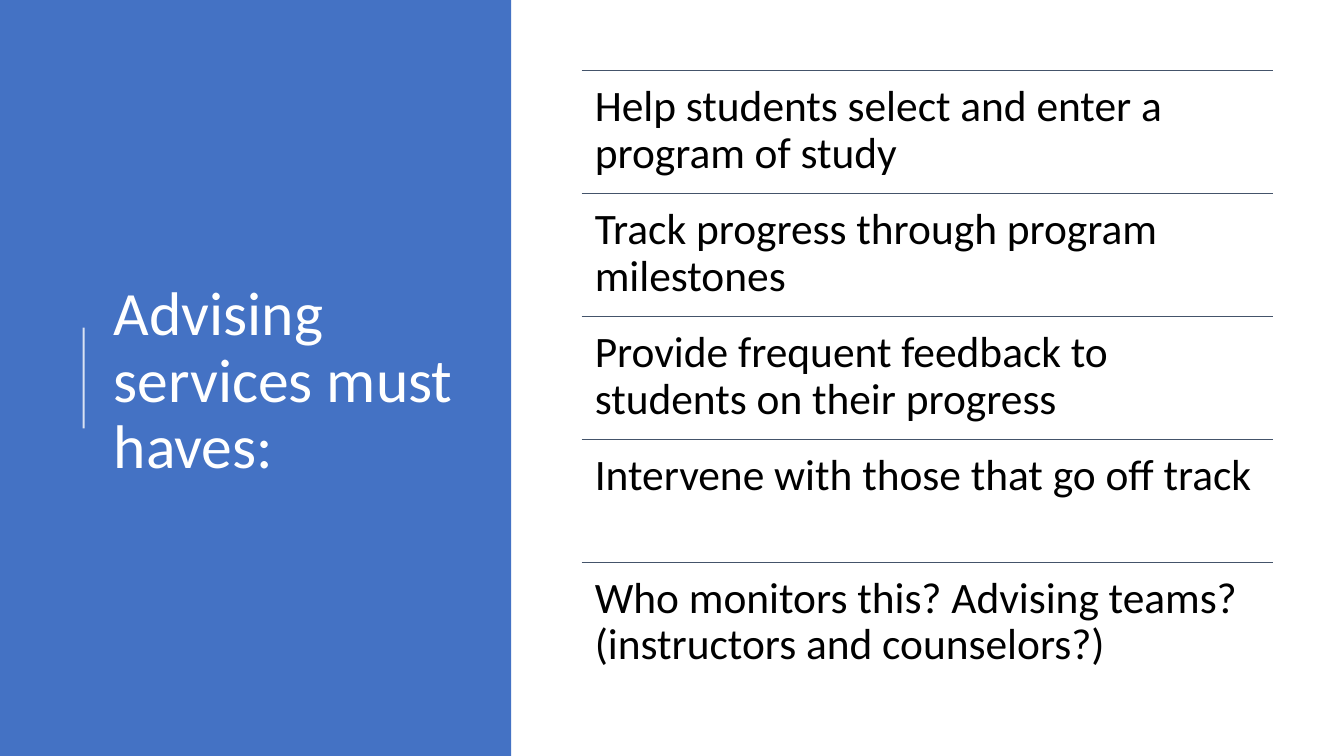
import pptx
import pptx.util
import pptx.dml.color
import pptx.enum.shapes
import pptx.enum.text
import pptx.oxml.ns
import lxml.etree

Inches = pptx.util.Inches


def color(value):
    return pptx.dml.color.RGBColor.from_string(value)


class SlideBuilder:
    font = "Calibri"
    blue = "4472C4"
    slate = "44546A"
    white = "FFFFFF"
    black = "000000"

    def __init__(self, deck):
        self.page = deck.slides.add_slide(deck.slide_layouts[6])

    def panel(self, left, top, width, height, fill):
        shape = self.page.shapes.add_shape(
            pptx.enum.shapes.MSO_SHAPE.RECTANGLE,
            Inches(left), Inches(top), Inches(width), Inches(height))
        shape.shadow.inherit = False
        shape.fill.solid()
        shape.fill.fore_color.rgb = color(fill)
        shape.line.fill.background()

    def line(self, start, end, stroke, weight, opacity=100):
        connector = self.page.shapes.add_connector(
            pptx.enum.shapes.MSO_CONNECTOR.STRAIGHT,
            *[Inches(value) for value in start + end])
        connector.line.color.rgb = color(stroke)
        connector.line.width = pptx.util.Pt(weight)
        properties = connector._element.spPr
        qualify = pptx.oxml.ns.qn
        lxml.etree.SubElement(properties, qualify("a:effectLst"))
        if opacity < 100:
            tint = properties.find(".//" + qualify("a:srgbClr"))
            alpha = lxml.etree.SubElement(tint, qualify("a:alpha"))
            alpha.set("val", str(opacity * 1000))

    def text(self, left, top, width, height, words, size, ink, anchor, insets):
        box = self.page.shapes.add_textbox(
            Inches(left), Inches(top), Inches(width), Inches(height))
        frame = box.text_frame
        frame.word_wrap = True
        frame.vertical_anchor = anchor
        frame.margin_left = frame.margin_right = Inches(insets[0])
        frame.margin_top = frame.margin_bottom = Inches(insets[1])
        para = frame.paragraphs[0]
        para.line_spacing = 0.9
        span = para.add_run()
        span.text = words
        span.font.name = self.font
        span.font.size = pptx.util.Pt(size)
        span.font.color.rgb = color(ink)


def main():
    deck = pptx.Presentation()
    deck.slide_width = Inches(13.33)
    deck.slide_height = Inches(7.5)
    slide = SlideBuilder(deck)
    anchors = pptx.enum.text.MSO_ANCHOR

    slide.panel(0, 0, 5.07, 7.5, slide.blue)
    slide.line((0.83, 4.25), (0.83, 3.25), slide.white, 1.5, opacity=80)
    slide.text(1.03, 0.78, 3.69, 6.02, "Advising services must haves:",
               44, slide.white, anchors.MIDDLE, (0.1, 0.05))

    must_haves = [
        "Help students select and enter a program of study",
        "Track progress through program milestones",
        "Provide frequent feedback to students on their progress",
        "Intervene with those that go off track",
        "Who monitors this? Advising teams? (instructors and counselors?)",
    ]
    left, first_top, width, row_height = 5.77, 0.7, 6.86, 1.22
    for index, must_have in enumerate(must_haves):
        top = first_top + index * row_height
        slide.line((left, top), (left + width, top), slide.slate, 1)
        slide.text(left, top, width, row_height, must_have,
                   31, slide.black, anchors.TOP, (0.13, 0.13))

    deck.save("out.pptx")


if __name__ == "__main__":
    main()
